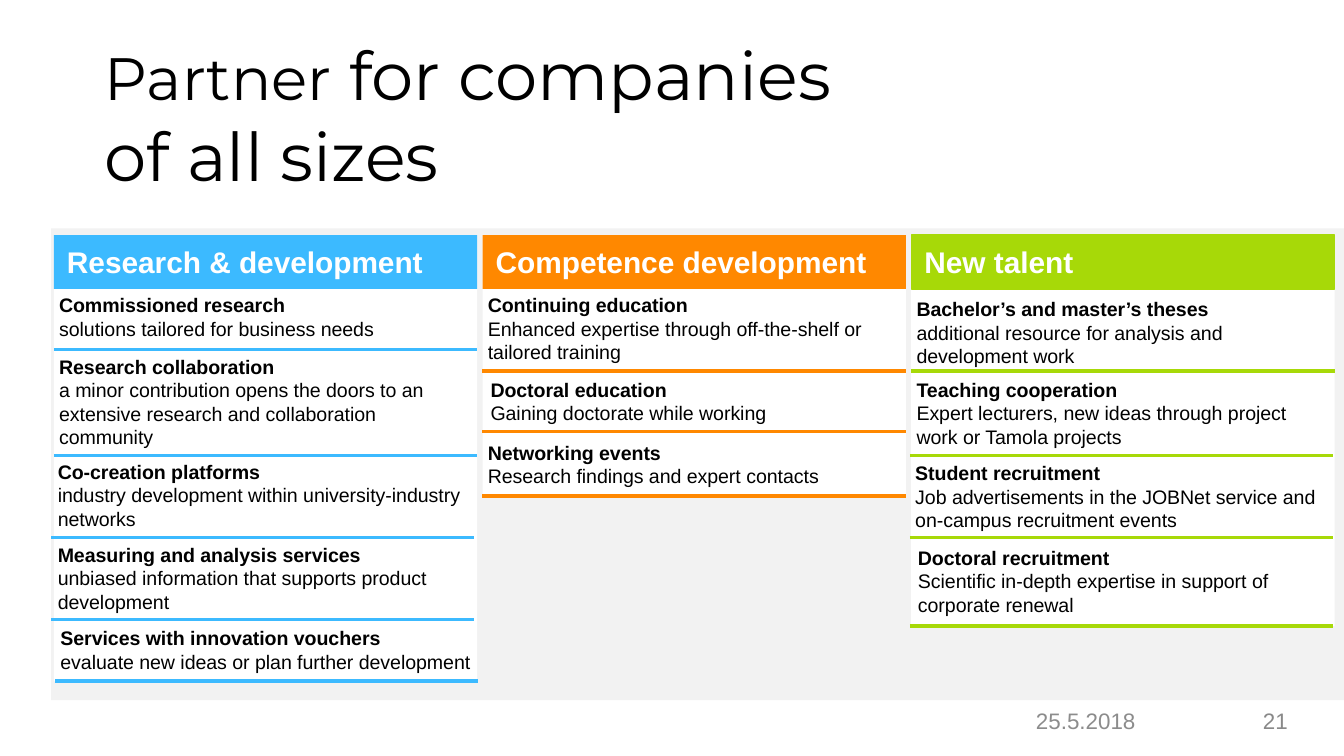
from pptx import Presentation
from pptx import util as u
from pptx.dml.color import RGBColor
from pptx.enum import shapes, text
from pptx.oxml.ns import qn
from lxml import etree

BLACK = RGBColor(0, 0, 0)
WHITE = RGBColor(0xFF, 0xFF, 0xFF)
PALE = RGBColor(0xF2, 0xF2, 0xF2)
GREY = RGBColor(0x8C, 0x8C, 0x8C)
MID = RGBColor(0x89, 0x89, 0x89)
BLUE = RGBColor(0x3C, 0xBA, 0xFF)
ORANGE = RGBColor(0xFF, 0x88, 0x00)
GREEN = RGBColor(0xA7, 0xD9, 0x08)

TOP, WIDE, HEAD = 1.75, 3.15, 0.4

# Column: left, bottom, colour, heading, heading outline width, items
# Item: text left, text top, lines, rule left, rule height on slide, name, detail
COLUMNS = [
    (0.4, 5.07, BLUE, "Research & development", 0, [
        (0.4, 2.14, 2, 0.4, 2.6, "Commissioned research",
         "solutions tailored for business needs"),
        (0.4, 2.6, 4, 0.4, 3.39, "Research collaboration",
         "a minor contribution opens the doors to an extensive research "
         "and collaboration community"),
        (0.39, 3.38, 3, 0.38, 4, "Co-creation platforms\n",
         "industry development within university-industry networks"),
        (0.39, 4, 3, 0.38, 4.61, "Measuring and analysis services",
         "unbiased information that supports product development"),
        (0.41, 4.62, 2, 0.41, 5.07, "Services with innovation vouchers",
         "evaluate new ideas or plan further development"),
    ]),
    (3.59, 3.69, ORANGE, "Competence development", 0, [
        (3.59, 2.14, 3, 3.59, 2.76, "Continuing education",
         "Enhanced expertise through off-the-shelf or tailored training"),
        (3.61, 2.77, 2, 3.59, 3.21, "Doctoral education",
         "Gaining doctorate while working"),
        (3.59, 3.24, 2, 3.59, 3.69, "Networking events",
         "Research findings and expert contacts"),
    ]),
    (6.78, 4.66, GREEN, "New talent", 0.75, [
        (6.78, 2.17, 3, 6.78, 2.76, "Bachelor’s and master’s theses",
         "additional resource for analysis and development work"),
        (6.78, 2.77, 3, 6.77, 3.39, "Teaching cooperation",
         "Expert lecturers, new ideas through project work or Tamola projects"),
        (6.77, 3.39, 3, 6.77, 4, "Student recruitment",
         "Job advertisements in the JOBNet service and on-campus "
         "recruitment events"),
        (6.79, 4.02, 3, 6.77, 4.66, "Doctoral recruitment",
         "Scientific in-depth expertise in support of corporate renewal"),
    ]),
]


class Deck:
    def __init__(self, wide, high):
        self.font = "Arial"
        self.file = Presentation()
        self.file.slide_width = u.Inches(wide)
        self.file.slide_height = u.Inches(high)
        self.slide = self.file.slides.add_slide(self.file.slide_layouts[5])

    def run(self, para, words, size, color=BLACK, bold=False, font=None):
        run = para.add_run()
        run.text = words
        run.font.size = u.Pt(size)
        run.font.name = font or self.font
        run.font.bold = bold
        run.font.color.rgb = color

    def title(self, box, parts):
        shape = self.slide.shapes.title
        shape.left, shape.top, shape.width, shape.height = map(u.Inches, box)
        frame = shape.text_frame
        frame.word_wrap = True
        frame.auto_size = text.MSO_AUTO_SIZE.NONE
        frame.vertical_anchor = text.MSO_ANCHOR.MIDDLE
        para = frame.paragraphs[0]
        para.alignment = text.PP_ALIGN.LEFT
        for words, size in parts:
            self.run(para, words, size, font="Montserrat")

    def rect(self, box, color, edge=0):
        shape = self.slide.shapes.add_shape(
            shapes.MSO_SHAPE.RECTANGLE, *map(u.Inches, box))
        shape.shadow.inherit = False
        shape.fill.solid()
        shape.fill.fore_color.rgb = color
        if edge:
            shape.line.color.rgb = color
            shape.line.width = u.Pt(edge)
        else:
            shape.line.fill.background()
        return shape

    def head(self, box, color, words, edge):
        frame = self.rect(box, color, edge).text_frame
        frame.word_wrap = True
        frame.vertical_anchor = text.MSO_ANCHOR.MIDDLE
        para = frame.paragraphs[0]
        para.alignment = text.PP_ALIGN.LEFT
        self.run(para, words, 16, WHITE, True)

    def frame(self, box):
        frame = self.slide.shapes.add_textbox(*map(u.Inches, box)).text_frame
        frame.word_wrap = True
        return frame

    def item(self, box, name, detail):
        """Add a bold name over its detail; a name ending in a newline shares one paragraph."""
        frame = self.frame(box)
        frame.auto_size = text.MSO_AUTO_SIZE.SHAPE_TO_FIT_TEXT
        frame.margin_left = frame.margin_right = u.Inches(0.04)
        frame.margin_top = frame.margin_bottom = u.Inches(0.04)
        para = frame.paragraphs[0]
        self.run(para, name.strip(), 10.5, bold=True)
        if name.endswith("\n"):
            para.add_line_break()
        else:
            para = frame.add_paragraph()
        self.run(para, detail, 10.5)

    def foot(self, box, words, color, align):
        frame = self.frame(box)
        frame.vertical_anchor = text.MSO_ANCHOR.MIDDLE
        para = frame.paragraphs[0]
        para.alignment = align
        self.run(para, words, 12, color)

    def rule(self, left, top, color):
        line = self.slide.shapes.add_connector(
            shapes.MSO_CONNECTOR.STRAIGHT,
            *map(u.Inches, (left, top, left + WIDE, top)))
        line.line.color.rgb = color
        line.line.width = u.Pt(2)
        etree.SubElement(line._element.spPr, qn("a:effectLst"))


def main():
    deck = Deck(10, 10 * 9 / 16)
    deck.title((0.68, 0.38, 6.16, 0.94),
               [("Partner", 32), (" for companies of all sizes", 36)])
    deck.rect((0.38, 1.7, 9.65, 3.51), PALE)
    for left, end, color, name, edge, items in COLUMNS:
        deck.rect((left, TOP, WIDE, end - TOP), WHITE)
        deck.head((left, TOP, WIDE, HEAD), color, name, edge)
        for x, y, rows, start, low, label, detail in items:
            deck.item((x, y, 3.17, 0.09 + 0.175 * rows), label, detail)
            deck.rule(start, low, color)
    deck.foot((7.61, 5.21, 1.15, 0.3), "25.5.2018", GREY, text.PP_ALIGN.LEFT)
    deck.foot((8.94, 5.21, 0.74, 0.3), "21", MID, text.PP_ALIGN.RIGHT)
    deck.file.save("out.pptx")


if __name__ == "__main__":
    main()
